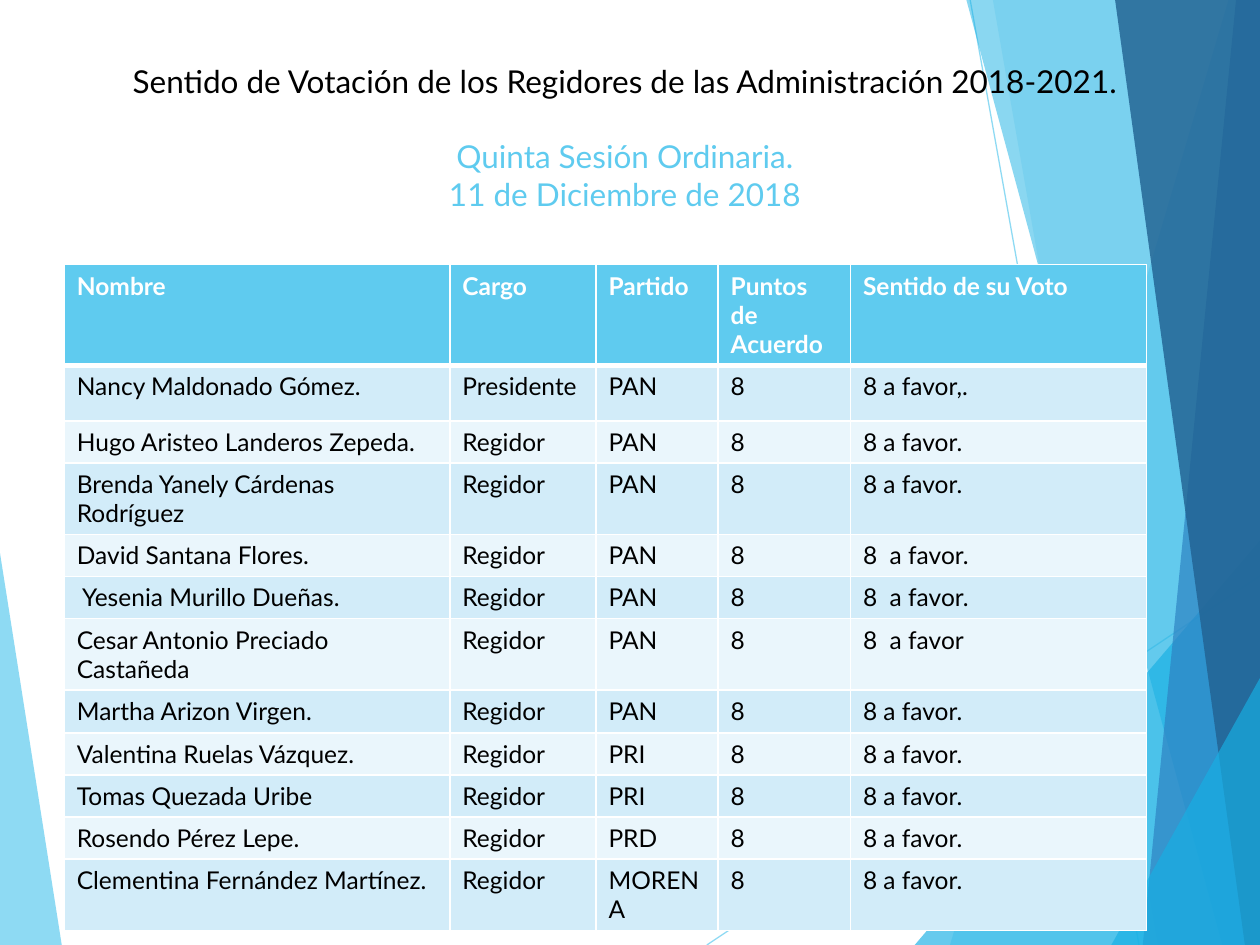
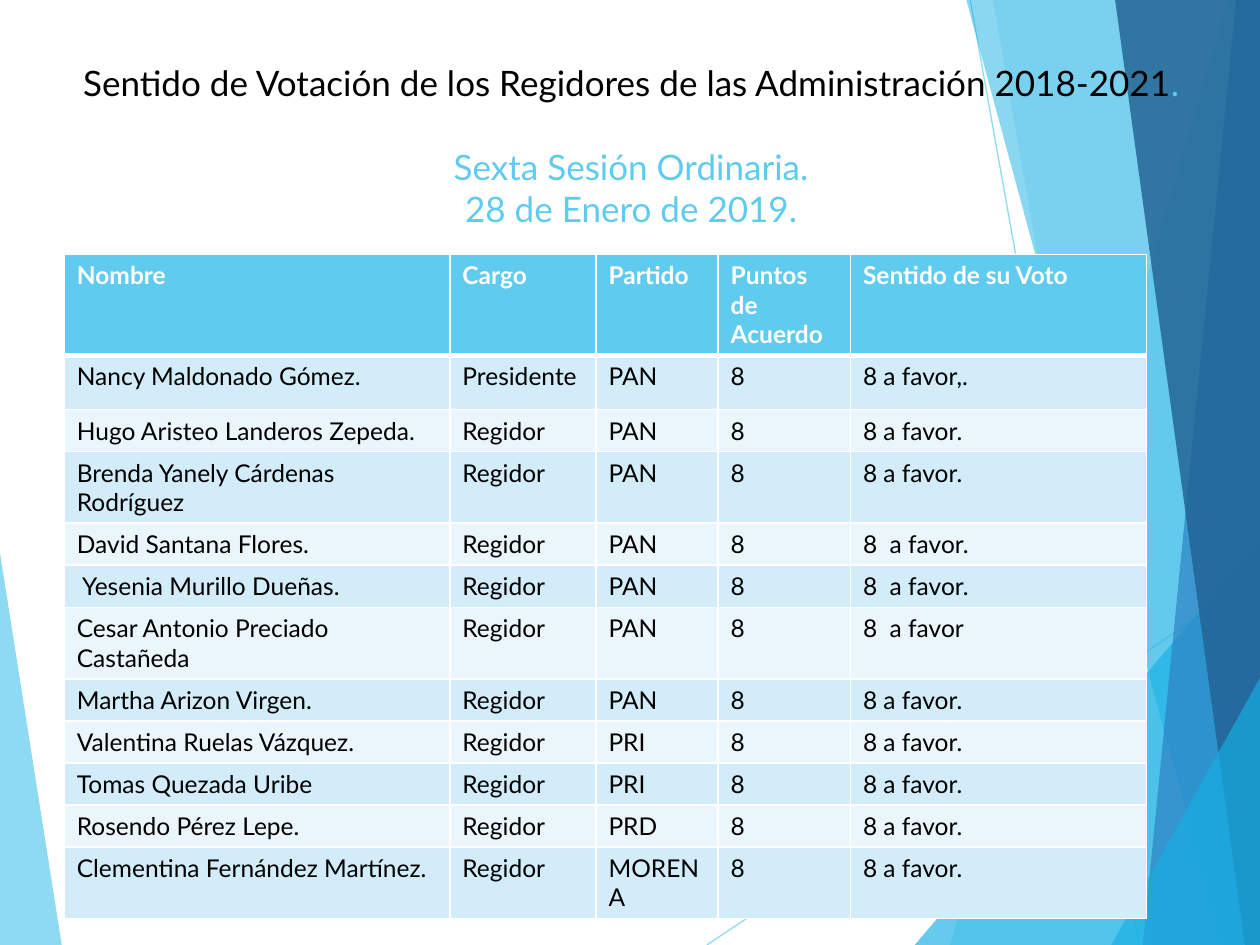
from dataclasses import dataclass

from lxml.etree import SubElement
from pptx import Presentation
from pptx.dml.color import RGBColor as Rgb
from pptx.enum.text import MSO_ANCHOR as Anchor, PP_ALIGN as Align
from pptx.oxml.ns import qn
from pptx.util import Emu, Pt

EMU_PER_PX = 9144  # 100 px to the inch
SLIDE_W, SLIDE_H = 1000, 750
LINE_SPACING = 1.2

COLORS = {
    "sky": "5FCBEF",
    "cyan": "17B0E4",
    "blue": "2E83C3",
    "navy": "226292",
    "band_dark": "D2ECF9",
    "band_light": "EAF6FC",
    "text": "000000",
    "white": "FFFFFF",
}
HEADER_FORMAT = {"name": "Lato", "size": Pt(14), "bold": True}
BODY_FORMAT = {**HEADER_FORMAT, "bold": False}


@dataclass(frozen=True)
class Facet:
    color: str
    opacity: int
    points: tuple[tuple[int, int], ...]


@dataclass(frozen=True)
class Ray:
    start: tuple[int, int]
    end: tuple[int, int]


@dataclass(frozen=True)
class Session:
    heading: tuple[tuple[str, str], ...]
    name: str
    date: str
    title_size: int
    title_box: tuple[int, int, int, int]
    table_top: int
    row_heights: tuple[int, ...]


BACKDROP = (
    Facet("sky", 70, ((0, 439), (49, 750), (0, 750))),
    Ray((561, 750), (1000, 457)),
    Ray((770, 0), (904, 750)),
    Facet("sky", 36, ((975, 0), (754, 750), (1000, 750), (1000, 0))),
    Facet("sky", 20, ((788, 0), (919, 750), (1000, 750), (1000, 0))),
    Facet("cyan", 66, ((726, 750), (1000, 429), (1000, 750))),
    Facet("cyan", 50, ((767, 0), (970, 750), (1000, 750), (1000, 0))),
    Facet("blue", 70, ((981, 0), (907, 750), (1000, 750), (1000, 0))),
    Facet("navy", 82, ((885, 0), (988, 750), (1000, 750), (1000, 0))),
    Facet("cyan", 66, ((882, 750), (1000, 538), (1000, 750))),
)

TABLE_LEFT = 51
COLUMN_WIDTHS = (306, 116, 97, 105, 235)
HEADERS = ("Nombre", "Cargo", "Partido", "Puntos de Acuerdo", "Sentido de su Voto")
AGREEMENT_POINTS = "8"
COUNCILLORS = (
    ("Nancy Maldonado Gómez.", "Presidente", "PAN", "8 a favor,."),
    ("Hugo Aristeo Landeros Zepeda.", "Regidor", "PAN", "8 a favor."),
    ("Brenda Yanely Cárdenas Rodríguez", "Regidor", "PAN", "8 a favor."),
    ("David Santana Flores.", "Regidor", "PAN", "8  a favor."),
    (" Yesenia Murillo Dueñas.", "Regidor", "PAN", "8  a favor."),
    ("Cesar Antonio Preciado Castañeda", "Regidor", "PAN", "8  a favor"),
    ("Martha Arizon Virgen.", "Regidor", "PAN", "8 a favor."),
    ("Valentina Ruelas Vázquez.", "Regidor", "PRI", "8 a favor."),
    ("Tomas Quezada Uribe", "Regidor", "PRI", "8 a favor."),
    ("Rosendo Pérez Lepe.", "Regidor", "PRD", "8 a favor."),
    ("Clementina Fernández Martínez.", "Regidor", "MORENA", "8 a favor."),
)

HEADING = "Sentido de Votación de los Regidores de las Administración 2018-2021"
SESSIONS = (
    Session(
        heading=((HEADING + ".", "text"),),
        name="Quinta Sesión Ordinaria.",
        date="11 de Diciembre de 2018",
        title_size=18,
        title_box=(51, 44, 890, 150),
        table_top=210,
        row_heights=(78, 44, 33, 55, 32, 32, 55, 34, 32, 32, 32, 51),
    ),
    Session(
        heading=((HEADING, "text"), (".", "sky")),
        name="Sexta Sesión Ordinaria.",
        date="28 de Enero de 2019.",
        title_size=20,
        title_box=(51, 44, 900, 157),
        table_top=202,
        row_heights=(76, 43, 32, 54, 31, 31, 54, 33, 31, 31, 31, 49),
    ),
)


def px(length: int) -> Emu:
    return Emu(length * EMU_PER_PX)


def rgb(color: str) -> Rgb:
    return Rgb.from_string(COLORS[color])


def set_solid(fill, color: str) -> None:
    fill.solid()
    fill.fore_color.rgb = rgb(color)


def set_opacity(properties, percent: int) -> None:
    """Add an alpha value to the first colour below an XML element."""
    color = next(properties.iter(qn("a:srgbClr")))
    SubElement(color, qn("a:alpha"), val=str(percent * 1000))


def add_run(paragraph, text: str, color: str, font_format: dict) -> None:
    run = paragraph.add_run()
    run.text = text
    for attribute, value in font_format.items():
        setattr(run.font, attribute, value)
    run.font.color.rgb = rgb(color)


def draw_facet(slide, facet: Facet) -> None:
    outline = slide.shapes.build_freeform(*facet.points[0], scale=EMU_PER_PX)
    outline.add_line_segments(facet.points[1:], close=True)
    pane = outline.convert_to_shape()
    pane.shadow.inherit = False
    pane.line.fill.background()
    set_solid(pane.fill, facet.color)
    set_opacity(pane.fill._xPr, facet.opacity)


def draw_ray(slide, ray: Ray) -> None:
    ends = (px(length) for length in (*ray.start, *ray.end))
    line = slide.shapes.add_connector(1, *ends)
    line.line.width = Pt(0.75)
    line.line.color.rgb = rgb("sky")
    properties = line._element.spPr
    set_opacity(properties, 70)
    SubElement(properties, qn("a:effectLst"))


def draw_backdrop(slide) -> None:
    for part in BACKDROP:
        if isinstance(part, Facet):
            draw_facet(slide, part)
        else:
            draw_ray(slide, part)


def draw_title(slide, session: Session) -> None:
    box = slide.shapes.add_textbox(*map(px, session.title_box))
    frame = box.text_frame
    frame.word_wrap = True
    frame.vertical_anchor = Anchor.TOP
    title_format = {"name": "Lato", "size": Pt(session.title_size)}
    lines = (session.heading, ((session.name, "sky"),), ((session.date, "sky"),))
    for index, runs in enumerate(lines):
        paragraph = frame.add_paragraph() if index else frame.paragraphs[0]
        paragraph.alignment = Align.CENTER
        for text, color in runs:
            add_run(paragraph, text, color, title_format)
    frame.paragraphs[1].space_before = Pt(session.title_size * LINE_SPACING)


def set_borders(cell, top: int, bottom: int) -> None:
    """Draw white cell borders; top and bottom widths are in points."""
    properties = cell._tc.get_or_add_tcPr()
    for side, width in {"L": 1, "R": 1, "T": top, "B": bottom}.items():
        border = SubElement(properties, qn(f"a:ln{side}"), w=str(Pt(width)))
        fill = SubElement(border, qn("a:solidFill"))
        SubElement(fill, qn("a:srgbClr"), val=COLORS["white"])


def draw_vote_table(slide, session: Session) -> None:
    votes = [(*person, AGREEMENT_POINTS, vote) for *person, vote in COUNCILLORS]
    rows = [HEADERS, *votes]
    table = slide.shapes.add_table(
        len(rows), len(HEADERS), px(TABLE_LEFT), px(session.table_top),
        px(sum(COLUMN_WIDTHS)), px(sum(session.row_heights)),
    ).table
    for column, width in zip(table.columns, COLUMN_WIDTHS):
        column.width = px(width)
    for index, (row, height, texts) in enumerate(
        zip(table.rows, session.row_heights, rows)
    ):
        row.height = px(height)
        if index == 0:
            fill, color, font_format = "sky", "white", HEADER_FORMAT
        else:
            fill = "band_dark" if index % 2 else "band_light"
            color, font_format = "text", BODY_FORMAT
        for cell, text in zip(row.cells, texts):
            set_borders(cell, 3 if index == 1 else 1, 3 if index == 0 else 1)
            set_solid(cell.fill, fill)
            add_run(cell.text_frame.paragraphs[0], text, color, font_format)


def main() -> None:
    deck = Presentation()
    deck.slide_width, deck.slide_height = px(SLIDE_W), px(SLIDE_H)
    blank = deck.slide_layouts[6]
    for session in SESSIONS:
        slide = deck.slides.add_slide(blank)
        set_solid(slide.background.fill, "white")
        draw_backdrop(slide)
        draw_title(slide, session)
        draw_vote_table(slide, session)
    deck.save("out.pptx")


if __name__ == "__main__":
    main()
